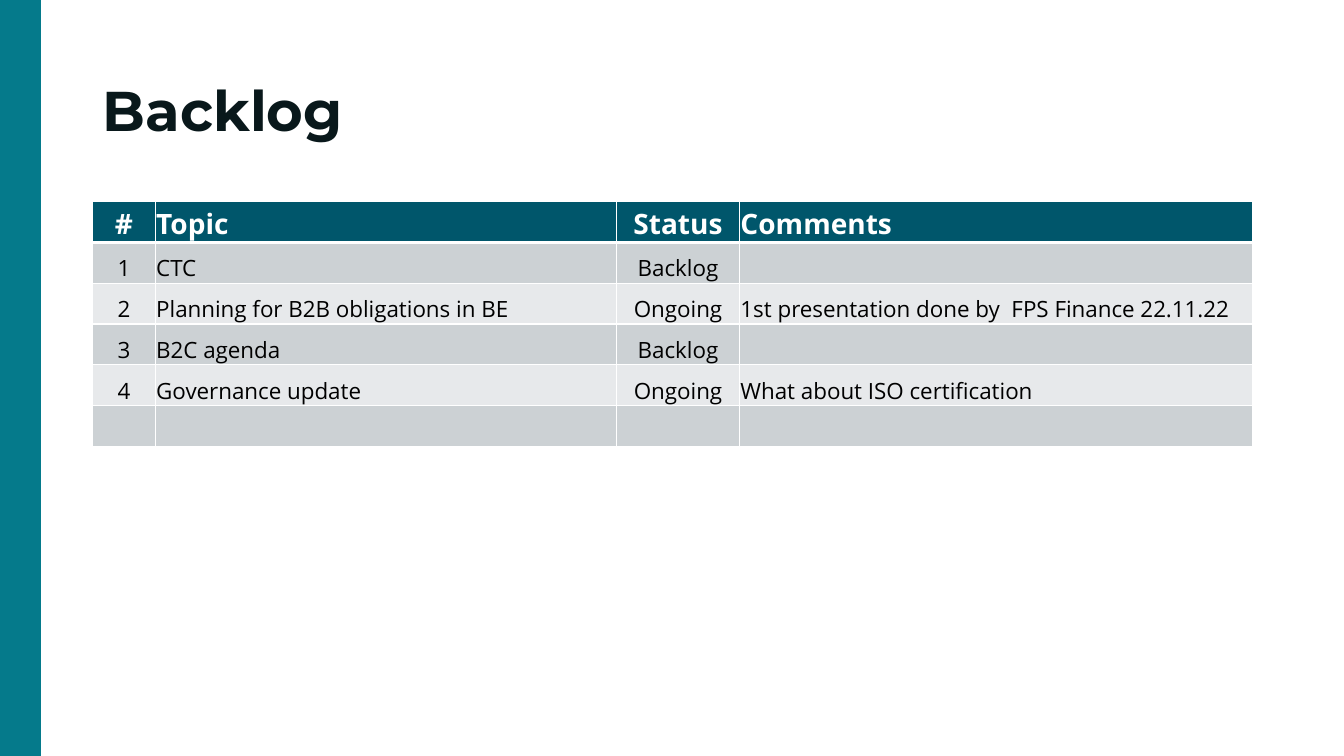
from lxml import etree
from pptx import Presentation
from pptx.dml.color import RGBColor
from pptx.enum.shapes import MSO_CONNECTOR
from pptx.enum.text import MSO_ANCHOR, MSO_AUTO_SIZE, PP_ALIGN
from pptx.oxml.ns import qn
from pptx.util import Inches, Pt

COLORS = {
    "bar": "057A8B",
    "title": "09181B",
    "header": "00566B",
    "odd": "CCD1D4",
    "even": "E7E9EB",
    "text": "000000",
    "white": "FFFFFF",
}
COL_WIDTHS = (0.62, 4.58, 1.22, 5.09)
COL_ALIGNS = (PP_ALIGN.CENTER, PP_ALIGN.LEFT, PP_ALIGN.CENTER, PP_ALIGN.LEFT)
ROWS = (
    ("#", "Topic", "Status", "Comments"),
    ("1", "CTC", "Backlog", ""),
    ("2", "Planning for B2B obligations in BE", "Ongoing",
     "1st presentation done by  FPS Finance 22.11.22"),
    ("3", "B2C agenda", "Backlog", ""),
    ("4", "Governance update", "Ongoing", "What about ISO certification"),
    ("", "", "", ""),
)


def rgb(name):
    return RGBColor.from_string(COLORS[name])


def write(tf, text, font="Open Sans", size=16, color="text", bold=False,
          align=PP_ALIGN.LEFT, spacing=None):
    p = tf.paragraphs[0]
    p.alignment = align
    if spacing:
        p.line_spacing = spacing
    if text:
        r = p.add_run()
        r.text = text
        r.font.name = font
        r.font.size = Pt(size)
        r.font.bold = bold
        r.font.color.rgb = rgb(color)


def set_borders(cell, **widths):
    """Draw white cell borders; widths are points keyed by L, R, T and B."""
    tcPr = cell._tc.get_or_add_tcPr()
    for side, width in widths.items():
        ln = etree.SubElement(tcPr, qn(f"a:ln{side}"), w=str(Pt(width)))
        fill = etree.SubElement(ln, qn("a:solidFill"))
        etree.SubElement(fill, qn("a:srgbClr"), val=COLORS["white"])


def add_side_bar(slide, x, top, bottom):
    line = slide.shapes.add_connector(
        MSO_CONNECTOR.STRAIGHT, Inches(x), Inches(top), Inches(x), Inches(bottom))
    line.line.color.rgb = rgb("bar")
    line.line.width = Pt(30)
    etree.SubElement(line._element.spPr, qn("a:effectLst"))


def add_title(slide, text, left, top, width, height):
    sp = slide.shapes.title
    sp.left, sp.top = Inches(left), Inches(top)
    sp.width, sp.height = Inches(width), Inches(height)
    tf = sp.text_frame
    tf.word_wrap = True
    tf.auto_size = MSO_AUTO_SIZE.NONE
    tf.vertical_anchor = MSO_ANCHOR.MIDDLE
    write(tf, text, font="Montserrat", size=40, color="title", bold=True, spacing=0.9)


def add_backlog_table(slide, left, top, width, height):
    table = slide.shapes.add_table(
        len(ROWS), len(COL_WIDTHS),
        Inches(left), Inches(top), Inches(width), Inches(height)).table
    for col, share in zip(table.columns, COL_WIDTHS):
        col.width = Inches(width * share / sum(COL_WIDTHS))
    for i, row in enumerate(ROWS):
        header = i == 0
        fill = "header" if header else "odd" if i % 2 else "even"
        for j, text in enumerate(row):
            cell = table.cell(i, j)
            cell.vertical_anchor = MSO_ANCHOR.BOTTOM
            cell.margin_left = cell.margin_right = cell.margin_top = Inches(0.01)
            cell.margin_bottom = 0
            set_borders(cell, L=1, R=1, T=3 if i == 1 else 1, B=3 if header else 1)
            cell.fill.solid()
            cell.fill.fore_color.rgb = rgb(fill)
            write(cell.text_frame, text, size=20 if header else 16, bold=header,
                  color="white" if header else "text", align=COL_ALIGNS[j])


def main():
    prs = Presentation()
    prs.slide_width, prs.slide_height = Inches(13.33), Inches(7.5)
    slide = prs.slides.add_slide(prs.slide_layouts.get_by_name("Title Only"))
    add_side_bar(slide, 0.2, 0, 7.5)
    add_title(slide, "Backlog", 0.92, 0.4, 11.5, 1.45)
    add_backlog_table(slide, 0.92, 2, 11.5, 2.43)
    prs.save("out.pptx")


if __name__ == "__main__":
    main()
